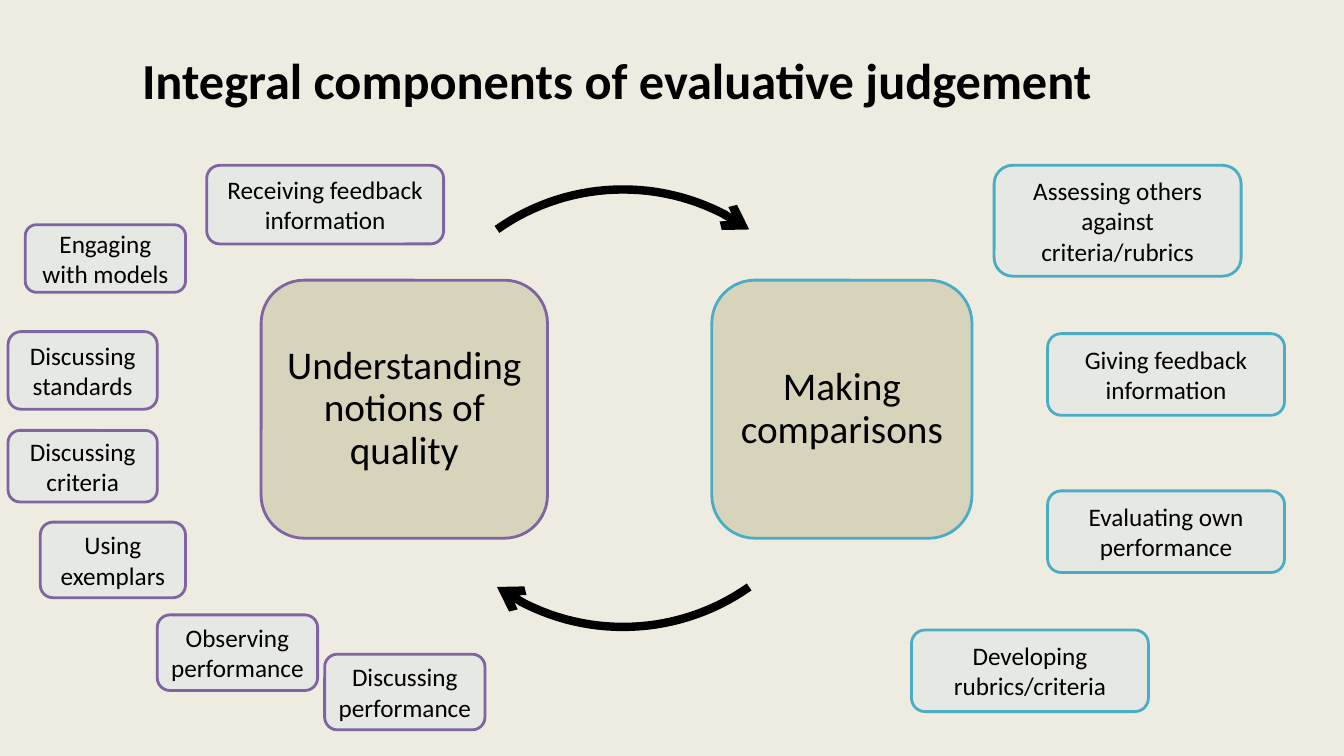
from math import cos, radians, sin

from pptx import Presentation
from pptx.dml.color import RGBColor
from pptx.enum import shapes, text
from pptx.oxml import ns
from pptx.util import Inches, Pt
from lxml import etree

COLORS = {
    "background": "EEECE1",
    "core": "C4BD97",
    "activity": "C6D9F1",
    "quality": "8064A2",
    "comparison": "4BACC6",
    "ink": "000000",
}


def color(name):
    return RGBColor.from_string(COLORS[name])


def add_box(slide, label, bounds, fill, outline, size, opacity):
    shape = slide.shapes.add_shape(
        shapes.MSO_SHAPE.ROUNDED_RECTANGLE, *[Inches(value) for value in bounds])
    shape.shadow.inherit = False
    shape.fill.solid()
    shape.fill.fore_color.rgb = color(fill)
    srgb = shape.fill._xPr.find(".//" + ns.qn("a:srgbClr"))
    etree.SubElement(srgb, ns.qn("a:alpha"), val=str(opacity * 1000))
    shape.line.color.rgb = color(outline)
    shape.line.width = Pt(2)
    frame = shape.text_frame
    frame.word_wrap = True
    frame.vertical_anchor = text.MSO_ANCHOR.MIDDLE
    frame.text = label
    paragraph = frame.paragraphs[0]
    paragraph.alignment = text.PP_ALIGN.CENTER
    paragraph.font.name = "Calibri"
    paragraph.font.size = Pt(size)
    paragraph.font.color.rgb = color("ink")
    return shape


presentation = Presentation()
presentation.slide_width = Inches(13.33)
presentation.slide_height = Inches(7.5)
slide = presentation.slides.add_slide(presentation.slide_layouts[5])
slide.background.fill.solid()
slide.background.fill.fore_color.rgb = color("background")

title = slide.shapes.title
title.left, title.top = Inches(0.37), Inches(0.34)
title.width, title.height = Inches(11.5), Inches(1.45)
title.text_frame.text = "Integral components of evaluative judgement"
title.text_frame.auto_size = text.MSO_AUTO_SIZE.NONE
title.text_frame.vertical_anchor = text.MSO_ANCHOR.TOP
title.text_frame.margin_top = Inches(0.15)
heading = title.text_frame.paragraphs[0]
heading.alignment = text.PP_ALIGN.CENTER
heading.font.name = "Calibri"
heading.font.size = Pt(36)
heading.font.bold = True
heading.font.color.rgb = color("ink")

core_boxes = [
    ("Understanding notions of quality", (2.59, 2.78, 2.84, 2.56), "quality"),
    ("Making comparisons", (7.06, 2.78, 2.58, 2.56), "comparison"),
]
for label, bounds, outline in core_boxes:
    shape = add_box(slide, label, bounds, "core", outline, 28, 50)
    frame = shape.text_frame
    frame.margin_left = frame.margin_right = Inches(0.12)
    frame.margin_top = frame.margin_bottom = Inches(0.12)
    frame.paragraphs[0].line_spacing = 0.9

center_x, center_y, radius = 6.18, 4.05, 2.17
sweep, steps = 70.4, 32
for start_angle in (234.8, 54.8):
    angles = [radians(start_angle + sweep * step / steps) for step in range(steps + 1)]
    points = [(Inches(center_x + radius * cos(angle)),
               Inches(center_y + radius * sin(angle))) for angle in angles]
    builder = slide.shapes.build_freeform(*points[0])
    builder.add_line_segments(points[1:], close=False)
    arrow = builder.convert_to_shape()
    arrow.shadow.inherit = False
    arrow.fill.background()
    arrow.line.color.rgb = color("ink")
    arrow.line.width = Pt(6)
    etree.SubElement(arrow.line._get_or_add_ln(), ns.qn("a:tailEnd"), type="arrow")

activities = {
    "quality": [
        ("Using exemplars", (0.4, 5.18, 1.44, 0.75)),
        ("Engaging with models", (0.25, 2.23, 1.59, 0.67)),
        ("Discussing standards", (0.08, 3.29, 1.48, 0.77)),
        ("Discussing criteria", (0.08, 4.27, 1.48, 0.71)),
        ("Observing performance", (1.56, 6.1, 1.59, 0.75)),
        ("Discussing performance", (3.22, 6.49, 1.59, 0.75)),
        ("Receiving feedback information", (2.05, 1.64, 2.35, 0.78)),
    ],
    "comparison": [
        ("Assessing others against criteria/rubrics", (9.86, 1.64, 2.45, 1.1)),
        ("Giving feedback information", (10.39, 3.31, 2.35, 0.81)),
        ("Evaluating own performance", (10.39, 4.87, 2.35, 0.81)),
        ("Developing rubrics/criteria", (9.04, 6.25, 2.35, 0.81)),
    ],
}
for outline, boxes in activities.items():
    for label, bounds in boxes:
        add_box(slide, label, bounds, "activity", outline, 18, 20)

presentation.save("out.pptx")
